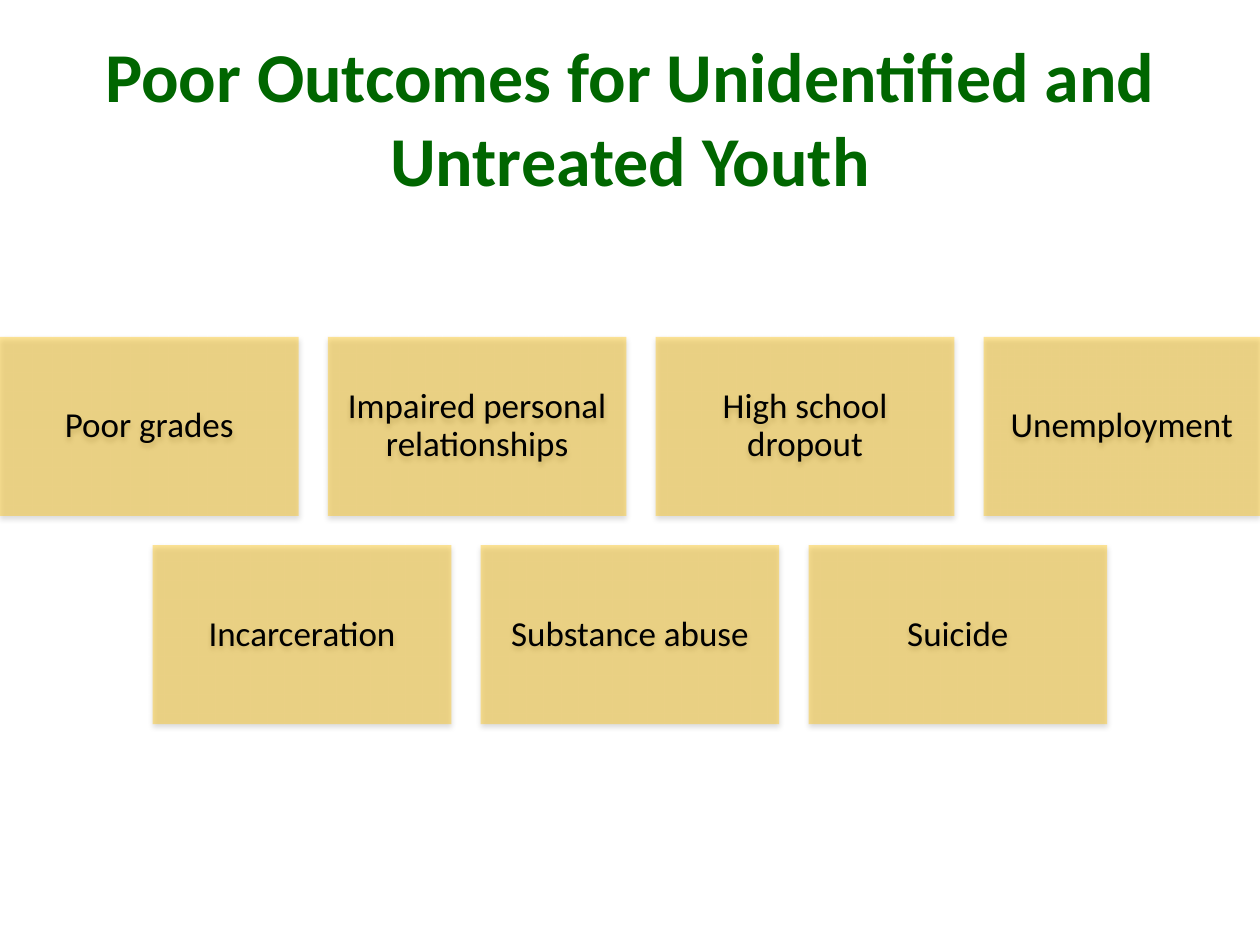
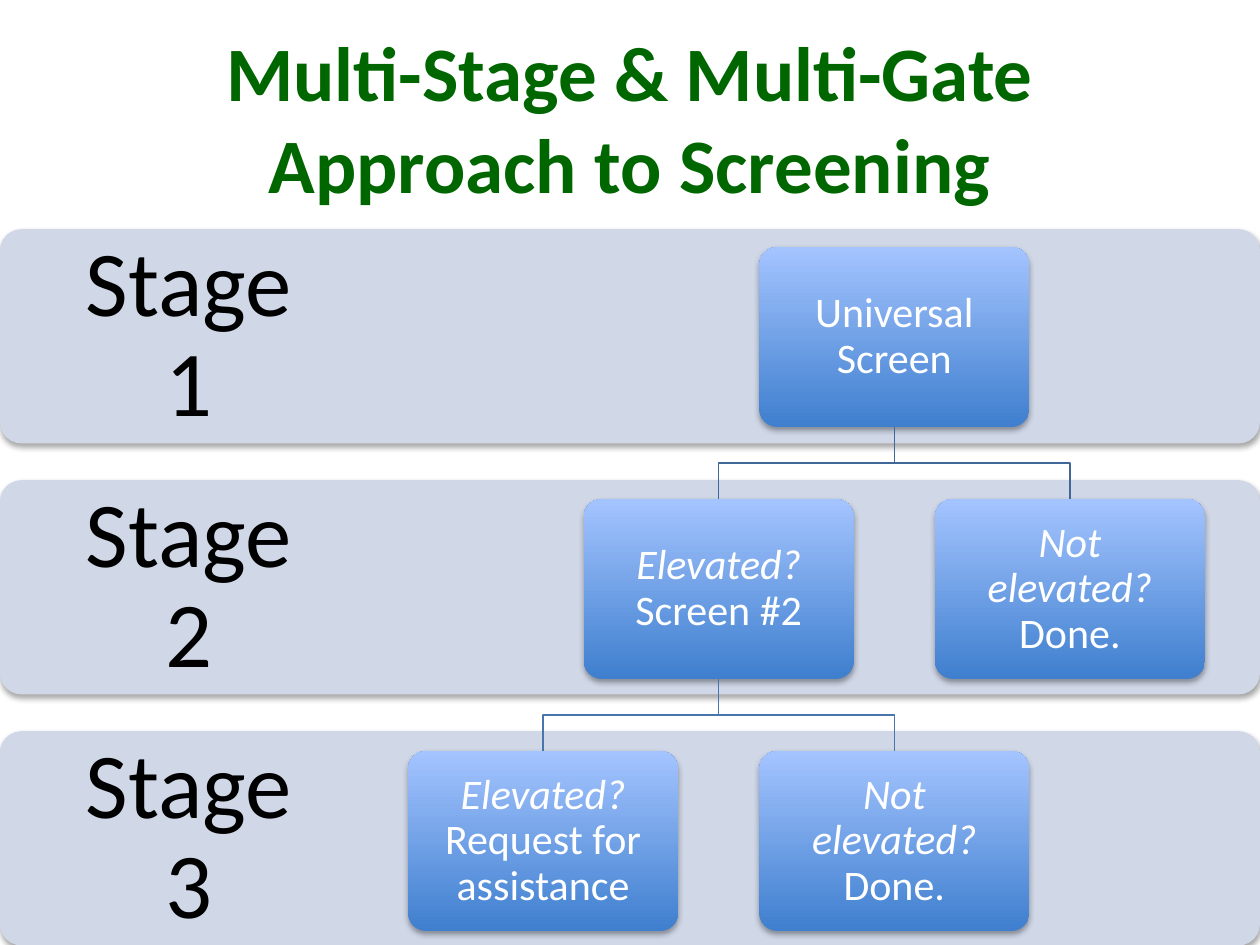
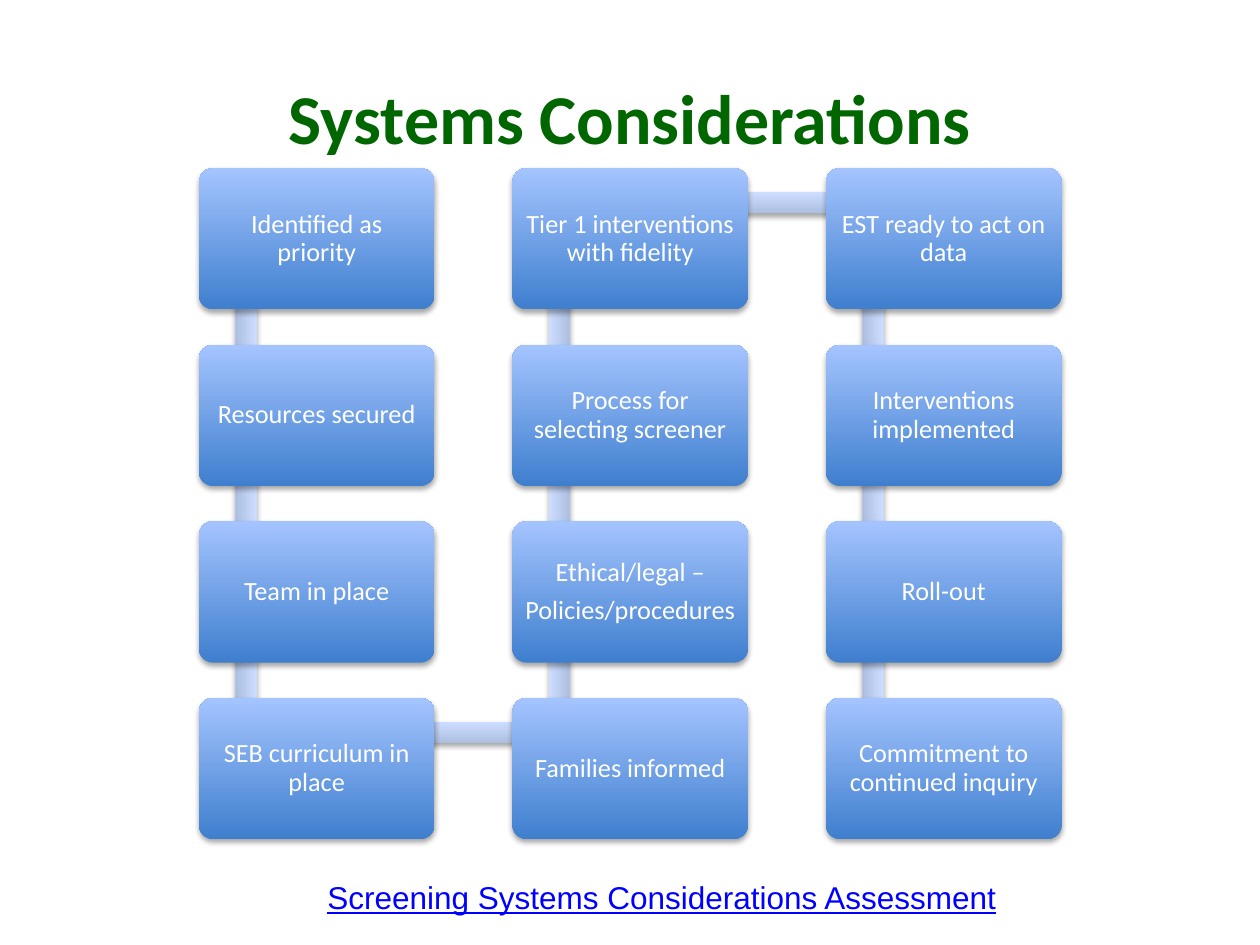
import math

import pptx
import pptx.dml.color
import pptx.enum.shapes
import pptx.enum.text
import pptx.oxml
import pptx.oxml.ns
import pptx.util
from pptx.util import Cm, Pt

COLORS = {
    "title": "006600",
    "gold": "FFC000",
    "band": "D0D8E8",
    "box_bottom": "3F7FCE",
    "box_top": "A4C4FF",
    "link_bottom": "ADBFE1",
    "link_top": "CCDDFF",
    "upper_line": "3F6797",
    "lower_line": "4875AC",
    "black": "000000",
    "white": "FFFFFF",
    "underlined": "0000FF",
}
BOX_GRADIENT = ("box_bottom", "box_top")
LINK_GRADIENT = ("link_bottom", "link_top")
SLIDE_WIDTH, SLIDE_HEIGHT = 25.4, 19.05
SHAPES = pptx.enum.shapes.MSO_SHAPE
ALIGN = pptx.enum.text.PP_ALIGN

OUTCOMES_TITLE = "Poor Outcomes for Unidentified and Untreated Youth"
OUTCOME_ROWS = [
    ["Poor grades", "Impaired personal relationships", "High school dropout", "Unemployment"],
    ["Incarceration", "Substance abuse", "Suicide"],
]

SCREENING_TITLE = "Multi-Stage & Multi-Gate Approach to Screening"
STAGES = ["Stage 1", "Stage 2", "Stage 3"]
# name: (stage row, half column, italic question, action)
GATES = {
    "universal": (0, 2, "", "Universal Screen"),
    "second": (1, 1, "Elevated? ", "Screen #2"),
    "first_done": (1, 3, "Not elevated? ", "Done."),
    "request": (2, 0, "Elevated? ", "Request for assistance"),
    "second_done": (2, 2, "Not elevated? ", "Done."),
}
GATE_LINKS = [
    ("universal", "second", "upper_line"),
    ("universal", "first_done", "upper_line"),
    ("second", "request", "lower_line"),
    ("second", "second_done", "lower_line"),
]

SYSTEMS_TITLE = "Systems Considerations"
SYSTEMS_FOOTER = "Screening Systems Considerations Assessment"
# Steps run down the first column, up the second and down the third.
STEP_COLUMNS = [
    ["Identified as priority", "Resources secured", "Team in place", "SEB curriculum in place"],
    ["Families informed", "Ethical/legal –\nPolicies/procedures",
     "Process for selecting screener", "Tier 1 interventions with fidelity"],
    ["EST ready to act on data", "Interventions implemented", "Roll-out",
     "Commitment to continued inquiry"],
]


def rgb(name):
    return pptx.dml.color.RGBColor.from_string(COLORS[name])


def add_shadow(shape):
    shape.shadow.inherit = False
    effects = shape._element.spPr.find(pptx.oxml.ns.qn("a:effectLst"))
    effects.append(pptx.oxml.parse_xml(
        f'<a:outerShdw {pptx.oxml.ns.nsdecls("a")} blurRad="40000" dist="23000" '
        'dir="5400000" rotWithShape="0"><a:srgbClr val="000000">'
        '<a:alpha val="35000"/></a:srgbClr></a:outerShdw>'))


def add_panel(slide, kind, left, top, width, height, fill, opacity=None):
    """Add a shadowed shape; fill is a colour name or a (bottom, top) pair."""
    shape = slide.shapes.add_shape(kind, Cm(left), Cm(top), Cm(width), Cm(height))
    if kind == SHAPES.ROUNDED_RECTANGLE:
        shape.adjustments[0] = 0.1
    if isinstance(fill, tuple):
        shape.fill.gradient()
        shape.fill.gradient_angle = 90
        for stop, name in zip(shape.fill.gradient_stops, fill):
            stop.color.rgb = rgb(name)
    else:
        shape.fill.solid()
        shape.fill.fore_color.rgb = rgb(fill)
    if opacity:
        color = shape._element.spPr.find(".//" + pptx.oxml.ns.qn("a:srgbClr"))
        color.append(pptx.oxml.parse_xml(
            f'<a:alpha {pptx.oxml.ns.nsdecls("a")} val="{opacity * 1000}"/>'))
    shape.line.fill.background()
    add_shadow(shape)
    return shape


def write_label(shape, text, size, color, inset, question=""):
    """Write centred, tightly spaced text, led by an italic question if given."""
    frame = shape.text_frame
    frame.word_wrap = True
    frame.vertical_anchor = pptx.enum.text.MSO_ANCHOR.MIDDLE
    frame.margin_left = frame.margin_right = Cm(inset)
    frame.margin_top = frame.margin_bottom = Cm(inset)
    for index, line in enumerate(text.split("\n")):
        paragraph = frame.add_paragraph() if index else frame.paragraphs[0]
        if question:
            lead = paragraph.add_run()
            lead.text = question
            lead.font.italic = True
        paragraph.add_run().text = line
        paragraph.alignment = ALIGN.CENTER
        paragraph.line_spacing = 0.9
        paragraph.space_after = Pt(round(0.35 * size))
        paragraph.font.name = "Calibri"
        paragraph.font.size = Pt(size)
        paragraph.font.color.rgb = rgb(color)


def add_titled_slide(presentation, title, size=40):
    slide = presentation.slides.add_slide(presentation.slide_layouts[6])
    box = slide.shapes.add_textbox(Cm(1.27), Cm(0.76), Cm(22.86), Cm(3.18))
    box.text_frame.word_wrap = True
    box.text_frame.vertical_anchor = pptx.enum.text.MSO_ANCHOR.MIDDLE
    paragraph = box.text_frame.paragraphs[0]
    paragraph.text = title
    paragraph.alignment = ALIGN.CENTER
    paragraph.font.name = "Calibri"
    paragraph.font.size = Pt(size)
    paragraph.font.bold = True
    paragraph.font.color.rgb = rgb("title")
    return slide


def build_outcomes(presentation):
    slide = add_titled_slide(presentation, OUTCOMES_TITLE)
    width, height, gap = 6.02, 3.61, 0.59
    for row, outcomes in enumerate(OUTCOME_ROWS):
        row_width = len(outcomes) * (width + gap) - gap
        row_left = max(0, (SLIDE_WIDTH - row_width) / 2)
        top = 6.79 + row * (height + gap)
        for column, outcome in enumerate(outcomes):
            left = row_left + column * (width + gap)
            card = add_panel(slide, SHAPES.RECTANGLE, left, top,
                             min(width, SLIDE_WIDTH - left), height, "gold", opacity=40)
            write_label(card, outcome, 20, "black", 0.2)


def add_gate_link(slide, parent, child, color):
    start_x, end_x = (gate.left + gate.width // 2 for gate in (parent, child))
    start_y, end_y = parent.top + parent.height, child.top
    middle_y = (start_y + end_y) // 2
    builder = slide.shapes.build_freeform(start_x, start_y)
    builder.add_line_segments(
        [(start_x, middle_y), (end_x, middle_y), (end_x, end_y)], close=False)
    link = builder.convert_to_shape()
    link.fill.background()
    link.line.color.rgb = rgb(color)
    link.line.width = Pt(0.75)
    link.shadow.inherit = False


def build_screening(presentation):
    slide = add_titled_slide(presentation, SCREENING_TITLE, 44)
    band_height = 4.32
    for row, stage in enumerate(STAGES):
        top = 4.62 + row * 5.06
        add_panel(slide, SHAPES.ROUNDED_RECTANGLE, 0, top, SLIDE_WIDTH, band_height, "band")
        label = slide.shapes.add_textbox(0, Cm(top), Cm(7.62), Cm(band_height))
        write_label(label, stage, 53, "black", 1.05)
    gates = {}
    for name, (row, half_column, question, action) in GATES.items():
        gates[name] = add_panel(
            slide, SHAPES.ROUNDED_RECTANGLE, 8.23 + half_column * 3.54, 4.98 + row * 5.08,
            5.44, 3.63, BOX_GRADIENT)
        write_label(gates[name], action, 24, "white", 0.25, question)
    for parent, child, color in GATE_LINKS:
        add_gate_link(slide, gates[parent], gates[child], color)


def add_step_link(slide, start, end):
    """Lay a bar between two points, turned to point from start to end."""
    (start_x, start_y), (end_x, end_y) = start, end
    length, thickness = math.dist(start, end), 0.43
    link = add_panel(slide, SHAPES.RECTANGLE, (start_x + end_x - length) / 2,
                     (start_y + end_y - thickness) / 2, length, thickness, LINK_GRADIENT)
    link.rotation = math.degrees(math.atan2(end_y - start_y, end_x - start_x)) % 360


def build_systems(presentation):
    slide = add_titled_slide(presentation, SYSTEMS_TITLE)
    steps = []
    for column, texts in enumerate(STEP_COLUMNS):
        for index, text in enumerate(texts):
            row = len(texts) - 1 - index if column % 2 else index
            steps.append((4.01 + column * 6.32, 3.39 + row * 3.56, text))
    anchors = [(left + 0.95, top + 0.7) for left, top, text in steps]
    for start, end in zip(anchors, anchors[1:]):
        add_step_link(slide, start, end)
    for left, top, text in steps:
        box = add_panel(slide, SHAPES.ROUNDED_RECTANGLE, left, top, 4.75, 2.85, BOX_GRADIENT)
        write_label(box, text, 15, "white", 0.15)

    footer = slide.shapes.add_textbox(Cm(6.35), Cm(17.58), Cm(14.15), Cm(1.8))
    footer.text_frame.word_wrap = False
    paragraph = footer.text_frame.paragraphs[0]
    paragraph.text = SYSTEMS_FOOTER
    paragraph.font.name = "Arial"
    paragraph.font.size = Pt(18)
    paragraph.font.underline = True
    paragraph.font.color.rgb = rgb("underlined")


def main():
    presentation = pptx.Presentation()
    presentation.slide_width = Cm(SLIDE_WIDTH)
    presentation.slide_height = Cm(SLIDE_HEIGHT)
    build_outcomes(presentation)
    build_screening(presentation)
    build_systems(presentation)
    presentation.save("out.pptx")


if __name__ == "__main__":
    main()
